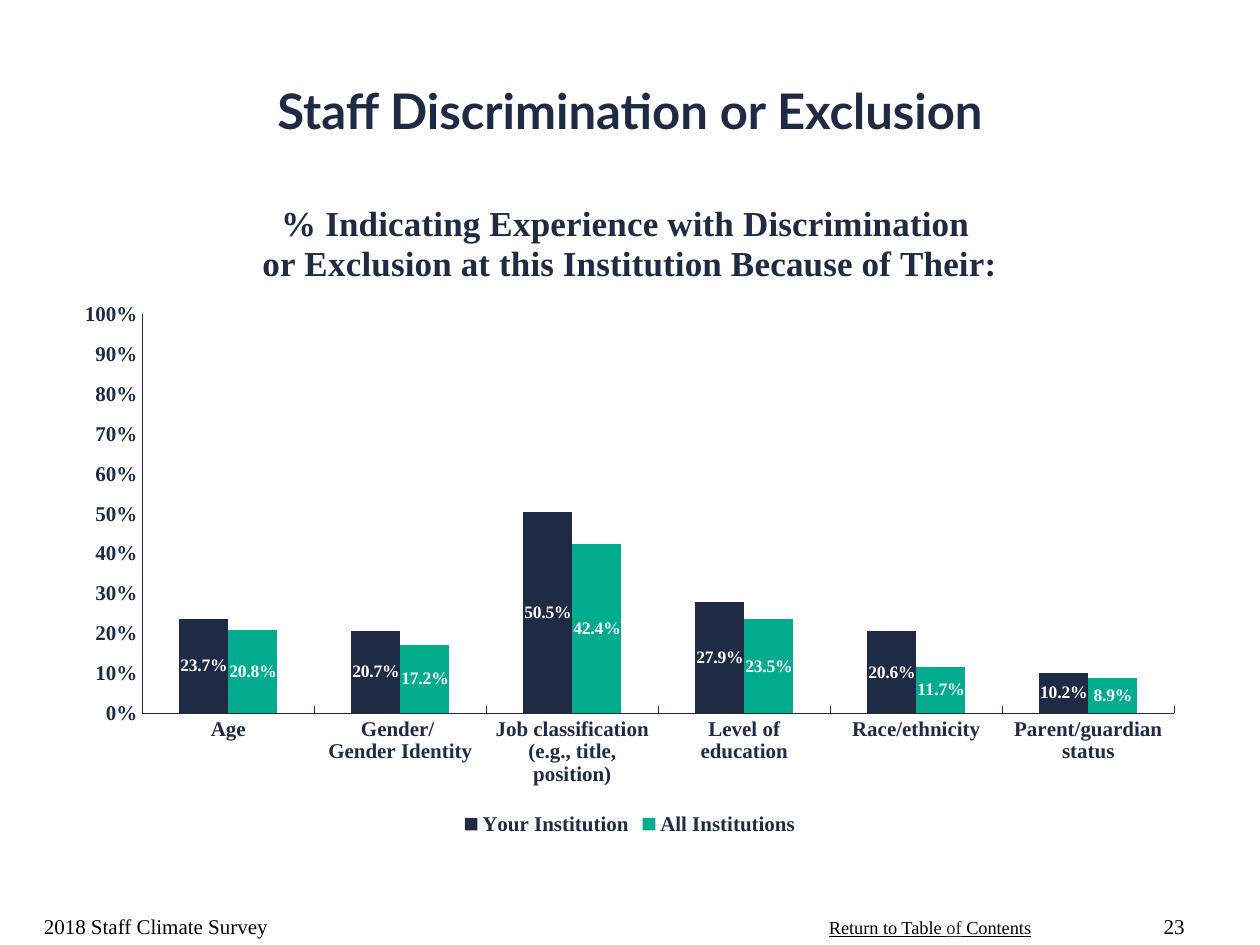
import pptx
import pptx.util
import pptx.chart.data
import pptx.dml.color
import pptx.enum.chart
import pptx.enum.text
import pptx.oxml

Inches = pptx.util.Inches
Align = pptx.enum.text.PP_ALIGN
Anchor = pptx.enum.text.MSO_ANCHOR
Fit = pptx.enum.text.MSO_AUTO_SIZE
Tick = pptx.enum.chart.XL_TICK_MARK
Place = pptx.enum.chart.XL_LABEL_POSITION

COLORS = {"navy": "1F2A44", "green": "00AB8E", "white": "FFFFFF", "black": "000000"}
SERIF = "Times New Roman"
CATS = ["Age", "Gender/ \nGender Identity", "Job classification (e.g., title, position)",
        "Level of education", "Race/ethnicity", "Parent/guardian status"]
SERIES = [
    ("Your Institution", "navy", [0.237, 0.207, 0.505, 0.279, 0.206, 0.102]),
    ("All Institutions", "green", [0.208, 0.172, 0.424, 0.235, 0.117, 0.089]),
]
HEAD = ("% Indicating Experience with Discrimination \n"
        "or Exclusion at this Institution Because of Their:")
PLOT = {"x": 0.07, "y": 0.205, "w": 0.91, "h": 0.603}


def rgb(name):
    return pptx.dml.color.RGBColor.from_string(COLORS[name])


def style(font, size, color="navy", bold=True, face=SERIF, line=None):
    font.size = pptx.util.Pt(size)
    font.name = face
    font.bold = bold
    font.color.rgb = rgb(color)
    if line is not None:
        font.underline = line


def write(frame, text, align=None, **form):
    for num, row in enumerate(text.split("\n")):
        para = frame.add_paragraph() if num else frame.paragraphs[0]
        if align is not None:
            para.alignment = align
        add_run(para, row, **form)


def add_run(para, text, **form):
    run = para.add_run()
    run.text = text
    style(run.font, **form)


def place(shape, left, top, width, height):
    shape.left, shape.top = Inches(left), Inches(top)
    shape.width, shape.height = Inches(width), Inches(height)


def add_box(slide, left, top, width, height, anchor=Anchor.BOTTOM, wrap=True):
    box = slide.shapes.add_textbox(Inches(left), Inches(top), Inches(width), Inches(height))
    frame = box.text_frame
    frame.word_wrap = wrap
    frame.vertical_anchor = anchor
    return frame


def add_title(slide, text):
    title = slide.shapes.title
    place(title, 0, 0.25, 10, 1.25)
    title.text_frame.vertical_anchor = Anchor.MIDDLE
    write(title.text_frame, text, align=Align.CENTER, size=28, face="Lato")


def add_link(slide):
    frame = add_box(slide, 6.48, 7.22, 1.82, 0.28, anchor=Anchor.TOP, wrap=False)
    frame.auto_size = Fit.SHAPE_TO_FIT_TEXT
    for text, color in (("Return to Table ", "black"), ("of", "navy"), (" Contents", "black")):
        add_run(frame.paragraphs[0], text, size=10.5, color=color, bold=False, line=True)


def set_axis(axis, tick):
    axis.has_major_gridlines = False
    axis.major_tick_mark = tick
    axis.minor_tick_mark = Tick.NONE
    axis.format.line.color.rgb = rgb("navy")
    axis.format.line.width = pptx.util.Pt(0.75)
    style(axis.tick_labels.font, 12)


def set_plot(chart):
    area = chart.plots[0]._element.getparent()
    for old in area.xpath("c:layout"):
        area.remove(old)
    sizes = "".join(f'<c:{key} val="{val}"/>' for key, val in PLOT.items())
    area.insert(0, pptx.oxml.parse_xml(
        '<c:layout xmlns:c="http://schemas.openxmlformats.org/drawingml/2006/chart">'
        '<c:manualLayout><c:layoutTarget val="inner"/><c:xMode val="edge"/>'
        f'<c:yMode val="edge"/>{sizes}</c:manualLayout></c:layout>'))


def set_bars(chart):
    plot = chart.plots[0]
    plot.gap_width = 150
    plot.overlap = 0
    plot.vary_by_categories = False
    for bars, (_, color, _) in zip(plot.series, SERIES):
        bars.format.fill.solid()
        bars.format.fill.fore_color.rgb = rgb(color)
        marks = bars.data_labels
        marks.show_value = True
        marks.position = Place.CENTER
        marks.number_format = "0.0%"
        marks.number_format_is_linked = False
        style(marks.font, 10, color="white")


def add_chart(slide):
    data = pptx.chart.data.CategoryChartData(number_format="0.0%")
    data.categories = CATS
    for name, _, vals in SERIES:
        data.add_series(name, vals)
    chart = slide.shapes.add_chart(
        pptx.enum.chart.XL_CHART_TYPE.COLUMN_CLUSTERED,
        Inches(0.5), Inches(1.42), Inches(9), Inches(5.25), data).chart
    style(chart.font, 10)
    chart.has_title = True
    write(chart.chart_title.text_frame, HEAD, size=20)
    chart.chart_title.include_in_layout = False
    set_axis(chart.category_axis, Tick.INSIDE)
    axis = chart.value_axis
    set_axis(axis, Tick.NONE)
    axis.minimum_scale, axis.maximum_scale, axis.major_unit = 0, 1, 0.1
    axis.tick_labels.number_format = "0%"
    axis.tick_labels.number_format_is_linked = False
    chart.has_legend = True
    chart.legend.position = pptx.enum.chart.XL_LEGEND_POSITION.BOTTOM
    chart.legend.include_in_layout = False
    style(chart.legend.font, 12)
    set_bars(chart)
    set_plot(chart)


def main():
    deck = pptx.Presentation()
    deck.slide_width, deck.slide_height = Inches(10), Inches(7.5)
    slide = deck.slides.add_slide(deck.slide_layouts[5])
    add_link(slide)
    add_title(slide, "Staff Discrimination or Exclusion")
    add_chart(slide)
    foot = {"size": 12, "color": "black", "bold": False}
    write(add_box(slide, 0.25, 7, 3.17, 0.5), "2018 Staff Climate Survey", **foot)
    write(add_box(slide, 9, 7, 0.5, 0.5), "23", align=Align.RIGHT, **foot)
    deck.save("out.pptx")


if __name__ == "__main__":
    main()
